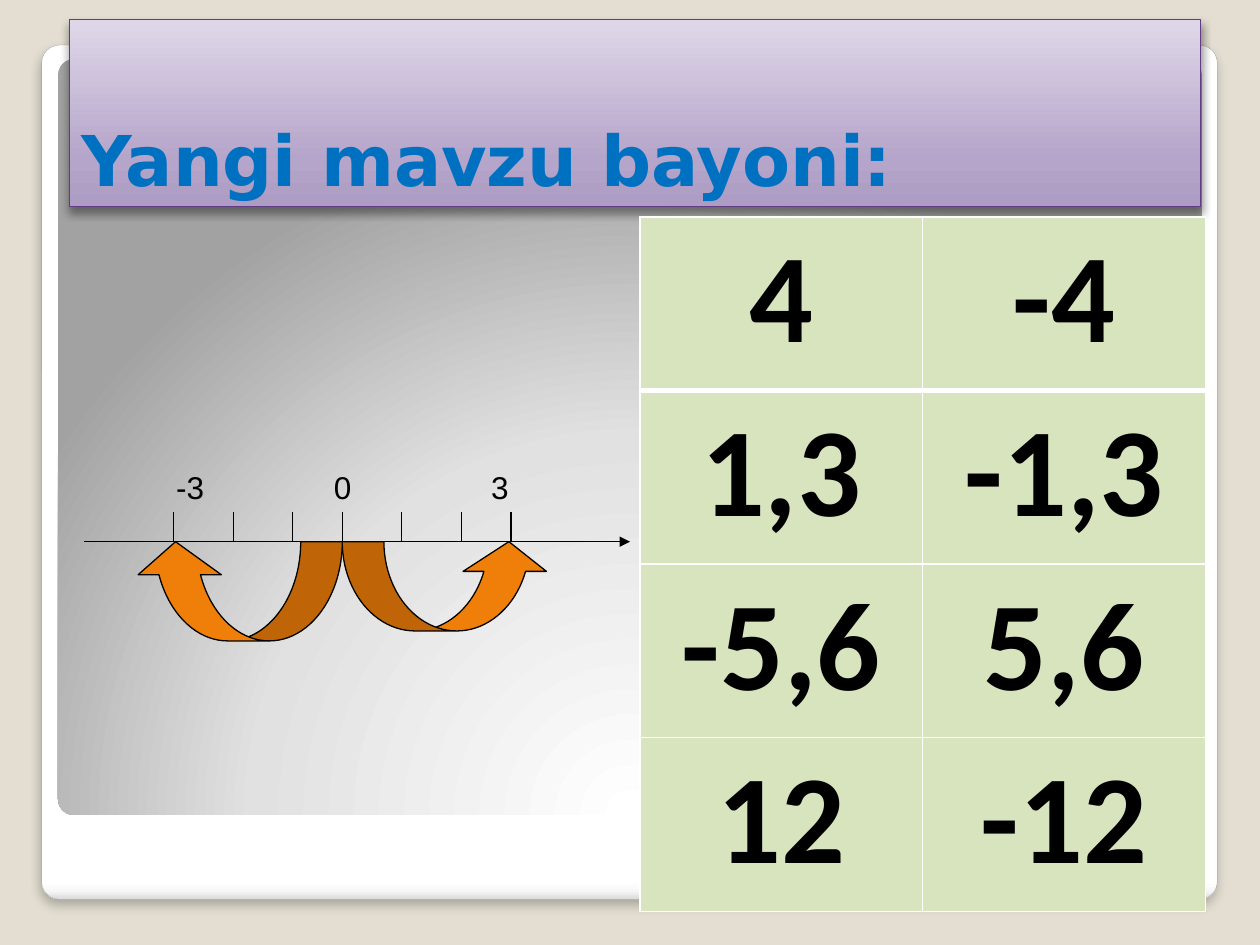
from dataclasses import dataclass
from typing import Optional

from pptx import Presentation
from pptx.dml.color import RGBColor
from pptx.enum.shapes import MSO_CONNECTOR, MSO_SHAPE
from pptx.enum.text import MSO_ANCHOR, PP_ALIGN
from pptx.oxml import parse_xml
from pptx.oxml.ns import nsdecls, qn
from pptx.util import Cm, Pt

ROUND_RECT = MSO_SHAPE.ROUNDED_RECTANGLE
RECT = MSO_SHAPE.RECTANGLE
UP_ARROW = MSO_SHAPE.CURVED_UP_ARROW
DOWN_ARROW = MSO_SHAPE.CURVED_DOWN_ARROW
STRAIGHT = MSO_CONNECTOR.STRAIGHT
BOTTOM = MSO_ANCHOR.BOTTOM
LEFT, CENTER = PP_ALIGN.LEFT, PP_ALIGN.CENTER

COLORS = {
    "background": "E3DED1", "frame_line": "A4A4A4", "title_line": "603C84",
    "title": "0070C0", "black": "000000", "white": "FFFFFF",
    "cell": "D7E4BD", "arrow": "F07F09",
}
LINEAR_DOWN = '<a:lin ang="5400000" scaled="0"/>'
LINEAR_UP = '<a:lin ang="16200000" scaled="0"/>'
RADIAL = ('<a:path path="circle"><a:fillToRect l="50000" t="175000" '
          'r="50000" b="-75000"/></a:path>')

NUMBER_PAIRS = [("4", "-4"), ("1,3", "-1,3"), ("-5,6", "5,6"), ("12", "-12")]
AXIS_Y, TICK_TOP = 10.92, 10.32
TICKS = [3.5, 4.7, 5.9, 6.9, 8.1, 9.3, 10.3]
ZERO_X, ARROW_WIDTH = 6.9, 4.2


@dataclass
class Shadow:
    alpha: int
    blur: float
    distance: float


@dataclass
class Panel:
    kind: int
    box: tuple[float, float, float, float]
    stops: list[tuple[int, str]]
    direction: str
    line: Optional[str] = None
    line_width: float = 0
    shadow: Optional[Shadow] = None


@dataclass
class JumpArrow:
    kind: int
    left: float
    height: float
    adjustments: tuple[float, float, float]
    rotation: int = 0


FRAME = Panel(ROUND_RECT, (0.84, 0.91, 23.7, 17.22),
              [(0, "FFFFFF"), (98, "FFFFFF"), (99, "F7F7F7"), (100, "DADADA")],
              LINEAR_DOWN, "frame_line", 0.16, Shadow(25, 6, 4))
BOARD = Panel(ROUND_RECT, (1.17, 1.19, 23.06, 15.24),
              [(0, "FFFFFF"), (55, "E1E1E1"), (100, "A2A2A2")], RADIAL)
TITLE = Panel(RECT, (1.4, 0.4, 22.8, 3.76),
              [(0, "AD9CC3"), (25, "B5A5CA"), (100, "DFD7E9")],
              LINEAR_UP, "title_line", 0.75, Shadow(40, 5.2, 3))
JUMPS = [
    JumpArrow(UP_ARROW, ZERO_X, 1.8, (0.467, 0.933, 0.333)),
    JumpArrow(DOWN_ARROW, ZERO_X - ARROW_WIDTH, 2, (0.419, 0.839, 0.333), 180),
]


def rgb(name: str) -> RGBColor:
    return RGBColor.from_string(COLORS[name])


def write(frame, text: str, font: str, size: int, color: str, bold: bool, align):
    frame.text = text
    paragraph = frame.paragraphs[0]
    paragraph.alignment = align
    for run in paragraph.runs:
        run.font.name, run.font.size, run.font.bold = font, Pt(size), bold
        run.font.color.rgb = rgb(color)
    return paragraph


def add_panel(slide, panel: Panel):
    shape = slide.shapes.add_shape(panel.kind, *map(Cm, panel.box))
    if panel.kind == ROUND_RECT:
        shape.adjustments[0] = 0.021
    shape.fill.gradient()
    stops = "".join(f'<a:gs pos="{position * 1000}"><a:srgbClr val="{color}"/></a:gs>'
                    for position, color in panel.stops)
    properties = shape._element.spPr
    properties.replace(properties.find(qn("a:gradFill")), parse_xml(
        f'<a:gradFill {nsdecls("a")} rotWithShape="1"><a:gsLst>{stops}</a:gsLst>'
        f'{panel.direction}</a:gradFill>'))
    if panel.line:
        shape.line.color.rgb = rgb(panel.line)
        shape.line.width = Pt(panel.line_width)
    else:
        shape.line.fill.background()
    shape.shadow.inherit = False
    if panel.shadow:
        properties.find(qn("a:effectLst")).append(parse_xml(
            f'<a:outerShdw {nsdecls("a")} blurRad="{Pt(panel.shadow.blur)}" '
            f'dist="{Pt(panel.shadow.distance)}" dir="5400000" rotWithShape="0">'
            f'<a:srgbClr val="{COLORS["black"]}">'
            f'<a:alpha val="{panel.shadow.alpha * 1000}"/></a:srgbClr></a:outerShdw>'))
    return shape


def add_line(slide, x1: float, y1: float, x2: float, y2: float, arrow: bool = False):
    line = slide.shapes.add_connector(STRAIGHT, Cm(x1), Cm(y1), Cm(x2), Cm(y2))
    line.line.color.rgb = rgb("black")
    line.line.width = Pt(0.75)
    if arrow:
        line.line._get_or_add_ln().append(
            parse_xml(f'<a:tailEnd {nsdecls("a")} type="triangle"/>'))
    line._element.spPr.append(parse_xml(f'<a:effectLst {nsdecls("a")}/>'))


def add_jump(slide, jump: JumpArrow):
    shape = slide.shapes.add_shape(jump.kind, Cm(jump.left), Cm(AXIS_Y),
                                   Cm(ARROW_WIDTH), Cm(jump.height))
    for index, value in enumerate(jump.adjustments):
        shape.adjustments[index] = value
    shape.rotation = jump.rotation
    shape.fill.solid()
    shape.fill.fore_color.rgb = rgb("arrow")
    shape.line.color.rgb = rgb("black")
    shape.line.width = Pt(0.75)
    shape.shadow.inherit = False


def set_borders(cell, widths: dict[str, int]):
    properties = cell._tc.get_or_add_tcPr()
    for index, (side, width) in enumerate(widths.items()):
        properties.insert(index, parse_xml(
            f'<a:ln{side} {nsdecls("a")} w="{Pt(width)}"><a:solidFill>'
            f'<a:srgbClr val="{COLORS["white"]}"/></a:solidFill></a:ln{side}>'))


def add_number_table(slide):
    table = slide.shapes.add_table(len(NUMBER_PAIRS), 2, Cm(12.9), Cm(4.37),
                                   Cm(11.4), Cm(14)).table
    table.first_row = table.horz_banding = False
    for row, pair in enumerate(NUMBER_PAIRS):
        table.rows[row].height = Cm(3.5)
        for column, number in enumerate(pair):
            cell = table.cell(row, column)
            cell.fill.solid()
            cell.fill.fore_color.rgb = rgb("cell")
            write(cell.text_frame, number, "Calibri", 72, "black", True, CENTER)
            set_borders(cell, {"L": 1, "R": 1, "T": 3 if row == 1 else 1,
                               "B": 3 if row == 0 else 1})


def add_axis_labels(slide):
    frame = slide.shapes.add_textbox(Cm(3.3), Cm(9.32), Cm(7.47), Cm(1.02)).text_frame
    frame.word_wrap = True
    paragraph = write(frame, "-3\t0\t3", "Arial", 18, "black", False, LEFT)
    tabs = "".join(f'<a:tab pos="{Cm(stop)}" algn="l"/>' for stop in (3.18, 6.35))
    paragraph._p.get_or_add_pPr().append(
        parse_xml(f'<a:tabLst {nsdecls("a")}>{tabs}</a:tabLst>'))


def main():
    presentation = Presentation()
    presentation.slide_width, presentation.slide_height = Cm(25.4), Cm(19.05)
    slide = presentation.slides.add_slide(presentation.slide_layouts[6])
    slide.background.fill.solid()
    slide.background.fill.fore_color.rgb = rgb("background")

    add_panel(slide, FRAME)
    add_panel(slide, BOARD)
    title = add_panel(slide, TITLE).text_frame
    title.word_wrap = True
    title.vertical_anchor = BOTTOM
    write(title, "Yangi mavzu bayoni:", "DejaVu Sans", 40, "title", True, LEFT)

    add_number_table(slide)
    add_line(slide, 1.7, AXIS_Y, 12.7, AXIS_Y, arrow=True)
    for x in TICKS:
        add_line(slide, x, TICK_TOP, x, AXIS_Y)
    for jump in JUMPS:
        add_jump(slide, jump)
    add_axis_labels(slide)
    presentation.save("out.pptx")


if __name__ == "__main__":
    main()
